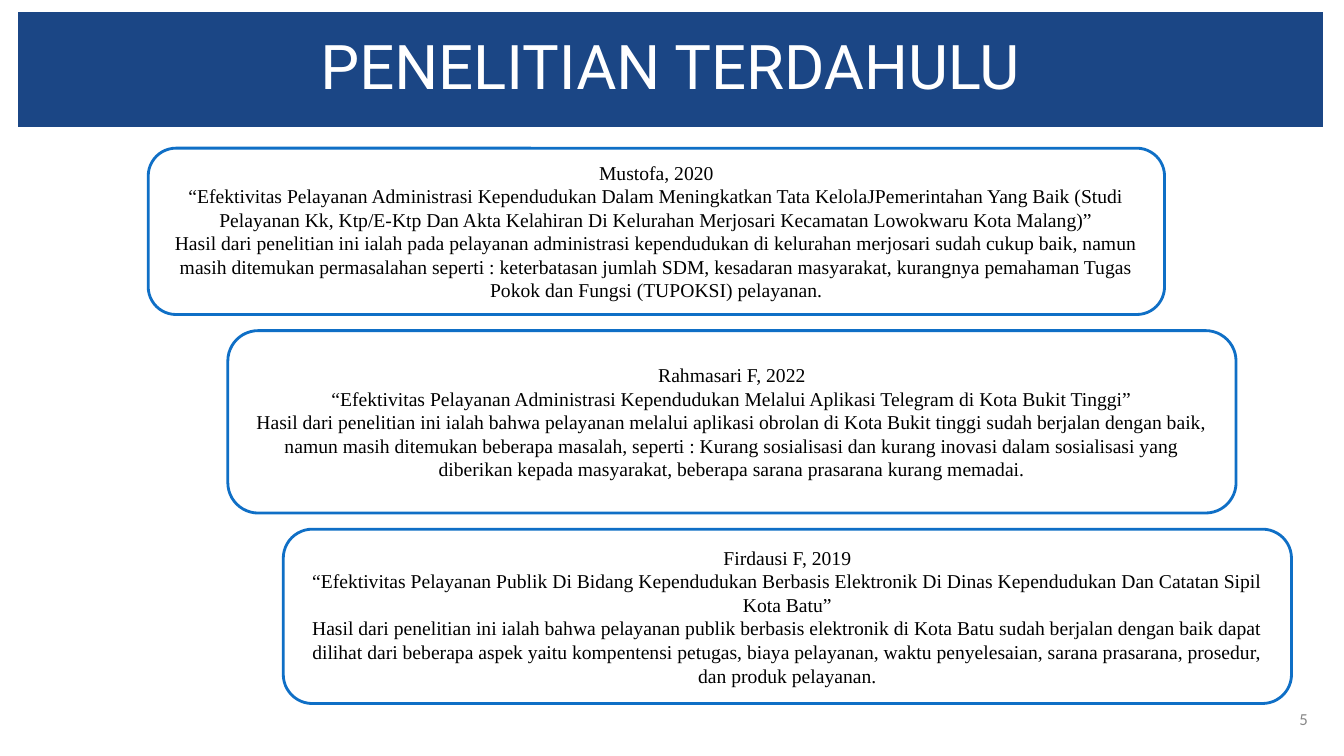
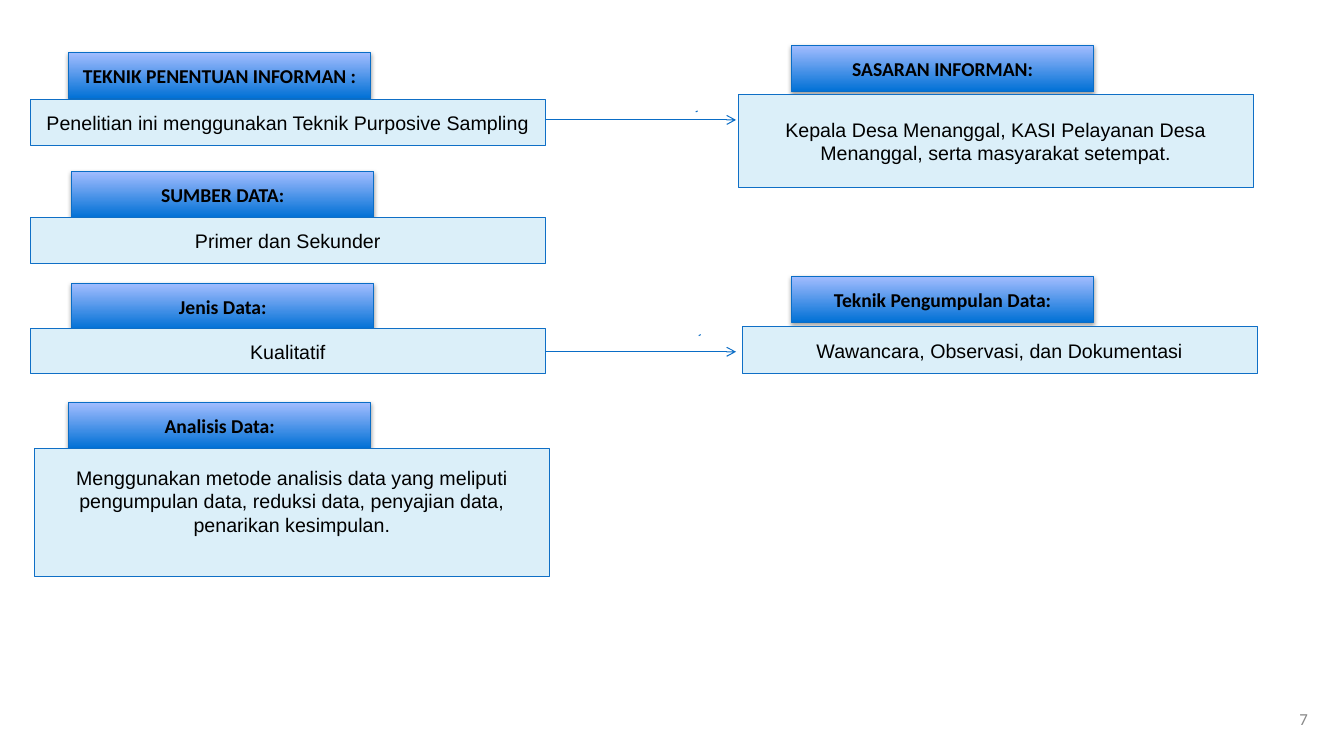
from lxml import etree
from pptx import Presentation
from pptx.dml.color import RGBColor
from pptx.enum.shapes import MSO_CONNECTOR, MSO_SHAPE
from pptx.enum.text import MSO_ANCHOR, PP_ALIGN
from pptx.oxml import parse_xml
from pptx.oxml.ns import nsdecls, qn
from pptx.util import Pt

PX = 9144  # one px is a hundredth of an inch

NAVY, BLUE, EDGE = "1B4685", "0F6FC6", "0A6DC6"
PALE, WHITE, BLACK, GREY = "DBEFF9", "FFFFFF", "000000", "888888"
GRADIENT = ("0070D5", "A3BDFF")
SHADOW = (
    f'<a:outerShdw {nsdecls("a")} blurRad="40000" dist="23000" dir="5400000" rotWithShape="0">'
    '<a:srgbClr val="000000"><a:alpha val="35000"/></a:srgbClr></a:outerShdw>'
)

STUDIES = [  # box, paragraphs
    ((147, 147, 1008, 165), [
        "Mustofa, 2020",
        "“Efektivitas Pelayanan Administrasi Kependudukan Dalam Meningkatkan Tata "
        "KelolaJPemerintahan Yang Baik (Studi Pelayanan Kk, Ktp/E-Ktp Dan Akta Kelahiran "
        "Di Kelurahan Merjosari Kecamatan Lowokwaru Kota Malang)”",
        "Hasil dari penelitian ini ialah pada pelayanan administrasi kependudukan di kelurahan "
        "merjosari sudah cukup baik, namun masih ditemukan permasalahan seperti : keterbatasan "
        "jumlah SDM, kesadaran masyarakat, kurangnya pemahaman Tugas Pokok dan Fungsi (TUPOKSI) "
        "pelayanan.",
    ]),
    ((226, 328, 1000, 181), [
        "Rahmasari F, 2022",
        "“Efektivitas Pelayanan Administrasi Kependudukan Melalui Aplikasi Telegram di Kota "
        "Bukit Tinggi”",
        "Hasil dari penelitian ini ialah bahwa pelayanan melalui aplikasi obrolan di Kota Bukit "
        "tinggi sudah berjalan dengan baik, namun masih ditemukan beberapa masalah, seperti : "
        "Kurang sosialisasi dan kurang inovasi dalam sosialisasi yang diberikan kepada "
        "masyarakat, beberapa sarana prasarana kurang memadai.",
    ]),
    ((281, 525, 1000, 173), [
        "Firdausi F, 2019",
        "“Efektivitas Pelayanan Publik Di Bidang Kependudukan Berbasis Elektronik Di Dinas "
        "Kependudukan Dan Catatan Sipil Kota Batu”",
        "Hasil dari penelitian ini ialah bahwa pelayanan publik berbasis elektronik di Kota Batu "
        "sudah berjalan dengan baik dapat dilihat dari beberapa aspek yaitu kompentensi petugas, "
        "biaya pelayanan, waktu penyelesaian, sarana prasarana, prosedur, dan produk pelayanan.",
    ]),
]

METHODS = [  # heading, heading left and top, text, text left, top and height, space below
    ("TEKNIK PENENTUAN INFORMAN :", (68, 52),
     "Penelitian ini menggunakan Teknik Purposive Sampling", (30, 99, 45), 5),
    ("SUMBER DATA:", (71, 170), "Primer dan Sekunder", (30, 216, 45), 5),
    ("Jenis Data:", (71, 281), "Kualitatif", (30, 326, 45), 5),
    ("Analisis Data:", (68, 399),
     "Menggunakan metode analisis data yang meliputi pengumpulan data, reduksi data, "
     "penyajian data, penarikan kesimpulan.", (34, 445, 127), 28),
    ("SASARAN INFORMAN:", (785, 45),
     "Kepala Desa Menanggal, KASI Pelayanan Desa Menanggal, serta masyarakat setempat.",
     (732, 94, 92), 5),
    ("Teknik Pengumpulan Data:", (785, 274),
     "Wawancara, Observasi, dan Dokumentasi", (736, 324, 47), 5),
]


def rgb(value):
    return RGBColor.from_string(value)


def emu(lengths):
    return [n * PX for n in lengths]


def write(sp, lines, font, size, color=BLACK, bold=False, align=PP_ALIGN.CENTER):
    tf = sp.text_frame
    tf.word_wrap = True
    tf.vertical_anchor = MSO_ANCHOR.MIDDLE
    tf.text = "\n".join(lines)
    for p in tf.paragraphs:
        p.alignment = align
        for r in p.runs:
            r.font.name, r.font.size, r.font.bold = font, Pt(size), bold
            r.font.color.rgb = rgb(color)
    return tf


def add_box(slide, box, fill, line=None, width=0.75, kind=MSO_SHAPE.RECTANGLE):
    sp = slide.shapes.add_shape(kind, *emu(box))
    sp.shadow.inherit = False
    sp.fill.solid()
    sp.fill.fore_color.rgb = rgb(fill)
    if line:
        sp.line.color.rgb = rgb(line)
        sp.line.width = Pt(width)
    else:
        sp.line.fill.background()
    return sp


def add_heading(slide, left, top, text):
    sp = add_box(slide, (left, top, 300, 46), GRADIENT[0], EDGE)
    sp.fill.gradient()
    sp.fill.gradient_angle = 90
    for stop, color in zip(sp.fill.gradient_stops, GRADIENT):
        stop.color.rgb = rgb(color)
    sp._element.spPr.find(qn("a:effectLst")).append(parse_xml(SHADOW))
    write(sp, [text], "Calibri", 14, bold=True)


def add_line(slide, ends, color, arrow=False):
    line = slide.shapes.add_connector(MSO_CONNECTOR.STRAIGHT, *emu(ends))
    line.line.color.rgb = rgb(color)
    line.line.width = Pt(0.75)
    if arrow:
        etree.SubElement(line.line._get_or_add_ln(), qn("a:tailEnd"), type="arrow")
    etree.SubElement(line._element.spPr, qn("a:effectLst"))


def add_slide(prs, number):
    slide = prs.slides.add_slide(prs.slide_layouts[6])
    sp = slide.shapes.add_textbox(*emu((1250, 693, 57, 40)))
    write(sp, [number], "Calibri", 12, GREY, align=PP_ALIGN.RIGHT)
    return slide


def build_studies(prs):
    slide = add_slide(prs, "5")
    # Title band
    band = add_box(slide, (18, 12, 1294, 114), NAVY)
    tf = write(band, ["PENELITIAN TERDAHULU"], "Roboto", 44, WHITE)
    tf.paragraphs[0].line_spacing = 0.9
    # Earlier studies
    for box, lines in STUDIES:
        card = add_box(slide, box, WHITE, BLUE, 2, MSO_SHAPE.ROUNDED_RECTANGLE)
        write(card, lines, "Times New Roman", 14)


def build_methods(prs):
    slide = add_slide(prs, "7")
    # Headings with their text boxes
    for heading, (x, y), text, (left, top, height), below in METHODS:
        add_heading(slide, x, y, heading)
        sp = add_box(slide, (left, top, 511, height), PALE, BLUE)
        write(sp, [text], "Arial", 14).margin_bottom = below * PX
    # Arrows from left to right
    for y in (119, 349):
        add_line(slide, (541, y, 730, y), EDGE, arrow=True)
    # Small ticks above the arrows
    for x, y in ((690, 111), (693, 333)):
        add_line(slide, (x, y, x + 2, y - 1), BLUE)


def main():
    prs = Presentation()
    prs.slide_width, prs.slide_height = emu((1333, 750))
    build_studies(prs)
    build_methods(prs)
    prs.save("out.pptx")


if __name__ == "__main__":
    main()
